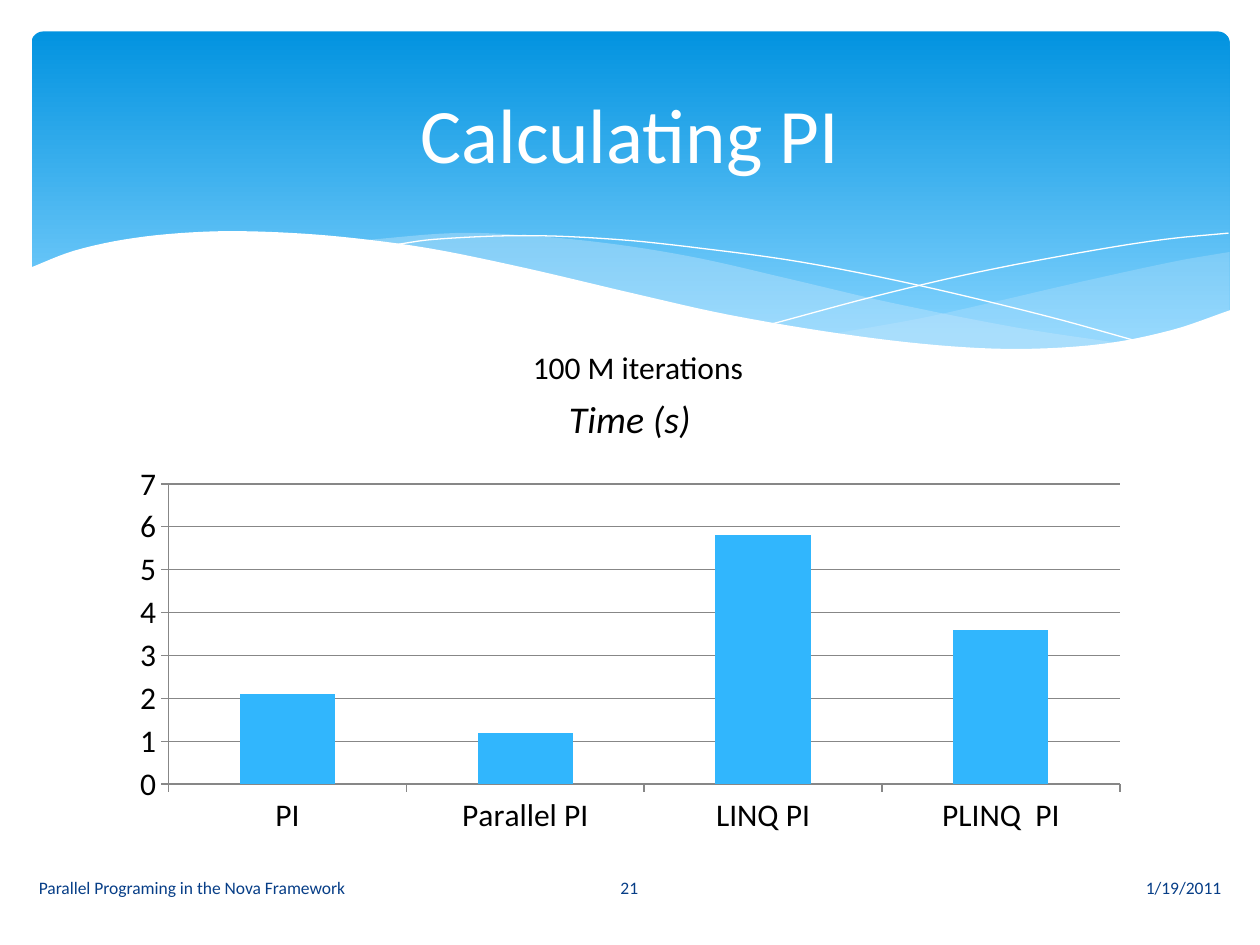
from dataclasses import dataclass

from lxml import etree
from pptx import Presentation
from pptx.chart.data import CategoryChartData
from pptx.dml.color import RGBColor
from pptx.enum.chart import XL_CHART_TYPE, XL_TICK_MARK
from pptx.enum.shapes import MSO_SHAPE
from pptx.enum.text import MSO_ANCHOR, PP_ALIGN
from pptx.oxml.ns import qn
from pptx.util import Inches, Pt

COLUMNS = XL_CHART_TYPE.COLUMN_CLUSTERED
TICK_OUT = XL_TICK_MARK.OUTSIDE
ROUNDED = MSO_SHAPE.ROUNDED_RECTANGLE
TOP, MIDDLE = MSO_ANCHOR.TOP, MSO_ANCHOR.MIDDLE
LEFT, CENTER, RIGHT = PP_ALIGN.LEFT, PP_ALIGN.CENTER, PP_ALIGN.RIGHT


@dataclass(frozen=True)
class Theme:
    font: str = "Calibri"
    white: str = "FFFFFF"
    black: str = "000000"
    band_top: str = "0293E0"
    band_bottom: str = "83D3FE"
    wave: str = "C6E7FC"
    bar: str = "31B6FD"
    axis: str = "878787"
    footer: str = "073E87"
    title_size: float = 44
    chart_title_size: float = 21.6
    body_size: float = 18
    footer_size: float = 10


THEME = Theme()

# Knots of the wave curves, in inches
RIGHT_CREST = [(9.76, 2), (9.35, 2.07), (8.61, 2.23), (7.79, 2.42), (7.29, 2.53), (6.61, 2.65)]
RIGHT_TROUGH = [(6.61, 2.65), (7.19, 2.72), (7.69, 2.77), (8.14, 2.78), (8.63, 2.75),
                (9.05, 2.69), (9.42, 2.59), (9.76, 2.47)]
MIDDLE_CREST = [(8.93, 2.73), (8.07, 2.6), (7.06, 2.4), (6.29, 2.22), (5.55, 2.05),
                (4.89, 1.94), (4.2, 1.87), (3.61, 1.85), (2.86, 1.91)]
MIDDLE_TROUGH = [(2.86, 1.91), (3.62, 2.03), (4.49, 2.22), (5.3, 2.4), (6.01, 2.55),
                 (6.8, 2.68), (7.48, 2.76), (8.18, 2.78), (8.93, 2.73)]
FALLING_LINE = [(3.09, 1.95), (3.44, 1.9), (4.16, 1.87), (4.89, 1.9), (5.56, 1.97),
                (6.36, 2.08), (7.27, 2.26), (8.31, 2.51), (9.07, 2.72)]
RISING_LINE = [(6.13, 2.57), (6.95, 2.35), (7.76, 2.16), (8.66, 1.99), (9.24, 1.9), (9.75, 1.85)]
MASK_EDGE = [(9.77, 2.46), (9.3, 2.62), (8.75, 2.73), (8.09, 2.77), (7.44, 2.74),
             (6.68, 2.65), (5.79, 2.5), (5.03, 2.33), (4.18, 2.13), (3.4, 1.97),
             (2.71, 1.88), (2.11, 1.84), (1.61, 1.84), (1.06, 1.89), (0.59, 1.99), (0.23, 2.13)]


def rgb(value):
    return RGBColor.from_string(value)


def smooth(knots, steps=6):
    """Points on a cubic Hermite curve through knots ordered along x."""
    last = len(knots) - 1
    slopes = []
    for i in range(last + 1):
        (x0, y0), (x1, y1) = knots[max(i - 1, 0)], knots[min(i + 1, last)]
        slopes.append((y1 - y0) / (x1 - x0))
    points = [knots[0]]
    for i in range(last):
        (x0, y0), (x1, y1) = knots[i], knots[i + 1]
        w = x1 - x0
        for k in range(1, steps + 1):
            t = k / steps
            blend = t * t * (3 - 2 * t)
            y = (y0 + (y1 - y0) * blend + w * slopes[i] * t * (1 - t) ** 2
                 - w * slopes[i + 1] * t * t * (1 - t))
            points.append((x0 + w * t, y))
    return points


def add_outline(s, points, fill=None, alpha=None, line=None):
    pts = [(Inches(x), Inches(y)) for x, y in points]
    builder = s.shapes.build_freeform(*pts[0], scale=1.0)
    builder.add_line_segments(pts[1:], close=fill is not None)
    sp = builder.convert_to_shape()
    sp.shadow.inherit = False
    if fill:
        sp.fill.solid()
        sp.fill.fore_color.rgb = rgb(fill)
    else:
        sp.fill.background()
    if alpha:
        color = sp.fill._xPr.find(qn("a:solidFill"))[0]
        etree.SubElement(color, qn("a:alpha")).set("val", str(alpha * 1000))
    if line:
        sp.line.color.rgb = rgb(line)
        sp.line.width = Pt(0)
    else:
        sp.line.fill.background()


def add_band(s):
    sp = s.shapes.add_shape(ROUNDED, Inches(0.25), Inches(0.25), Inches(9.51), Inches(2.7))
    sp.adjustments[0] = 0.034
    sp.shadow.inherit = False
    sp.line.fill.background()
    sp.fill.gradient()
    sp.fill.gradient_angle = 270
    stops = ((0, THEME.band_top), (0.9, THEME.band_bottom))
    for stop, (position, color) in zip(sp.fill.gradient_stops, stops):
        stop.position = position
        stop.color.rgb = rgb(color)


def add_text(s, text, box, size, color, align=LEFT, anchor=MIDDLE):
    tf = s.shapes.add_textbox(*(Inches(v) for v in box)).text_frame
    tf.word_wrap = True
    tf.vertical_anchor = anchor
    tf.text = text
    p = tf.paragraphs[0]
    p.alignment = align
    style_font(p.runs[0].font, size, color)


def style_font(font, size, color):
    font.name = THEME.font
    font.size = Pt(size)
    font.color.rgb = rgb(color)


def add_time_chart(s):
    data = CategoryChartData()
    data.categories = ["PI", "Parallel PI", "LINQ PI", "PLINQ  PI"]
    data.add_series("Time (s)", [2.1, 1.2, 5.8, 3.6])
    chart = s.shapes.add_chart(COLUMNS, Inches(0.95), Inches(2.93), Inches(8.1), Inches(3.77),
                               data).chart
    style_font(chart.font, THEME.body_size, THEME.black)
    chart.has_legend = False

    # Title
    chart.has_title = True
    tf = chart.chart_title.text_frame
    tf.text = "Time (s)"
    font = tf.paragraphs[0].runs[0].font
    style_font(font, THEME.chart_title_size, THEME.black)
    font.bold, font.italic = False, True
    chart.chart_title.include_in_layout = False

    # Axes and columns
    for axis in (chart.category_axis, chart.value_axis):
        axis.major_tick_mark = TICK_OUT
        axis.format.line.color.rgb = rgb(THEME.axis)
    chart.value_axis.has_major_gridlines = True
    chart.value_axis.major_gridlines.format.line.color.rgb = rgb(THEME.axis)
    chart.value_axis.tick_labels.number_format = "General"
    chart.value_axis.tick_labels.number_format_is_linked = False
    plot = chart.plots[0]
    plot.gap_width = 150
    plot.vary_by_categories = False
    fill = plot.series[0].format.fill
    fill.solid()
    fill.fore_color.rgb = rgb(THEME.bar)


def main():
    prs = Presentation()
    prs.slide_width, prs.slide_height = Inches(10), Inches(7.5)
    s = prs.slides.add_slide(prs.slide_layouts[6])

    # Header band with waves
    add_band(s)
    add_outline(s, smooth(RIGHT_CREST) + smooth(RIGHT_TROUGH), THEME.wave, alpha=29)
    add_outline(s, smooth(MIDDLE_CREST) + smooth(MIDDLE_TROUGH), THEME.wave, alpha=40)
    for knots in (FALLING_LINE, RISING_LINE):
        add_outline(s, smooth(knots), line=THEME.white)
    add_outline(s, smooth(MASK_EDGE) + [(0.23, 3.29), (9.77, 3.29)], THEME.white)

    # Footer
    for text, left, width, align in (
        ("1/19/2011", 5.65, 4.14, RIGHT),
        ("Parallel Programing in the Nova Framework", 0.21, 4.14, LEFT),
        ("21", 4.36, 1.27, CENTER),
    ):
        add_text(s, text, (left, 6.84, width, 0.4), THEME.footer_size, THEME.footer, align)

    # Title, chart and caption
    add_text(s, "Calculating PI", (0.5, 0.37, 9, 1.37), THEME.title_size, THEME.white, CENTER)
    add_time_chart(s)
    add_text(s, "100 M iterations", (4.13, 2.71, 1.89, 0.4), THEME.body_size, THEME.black,
             anchor=TOP)
    prs.save("out.pptx")


if __name__ == "__main__":
    main()
